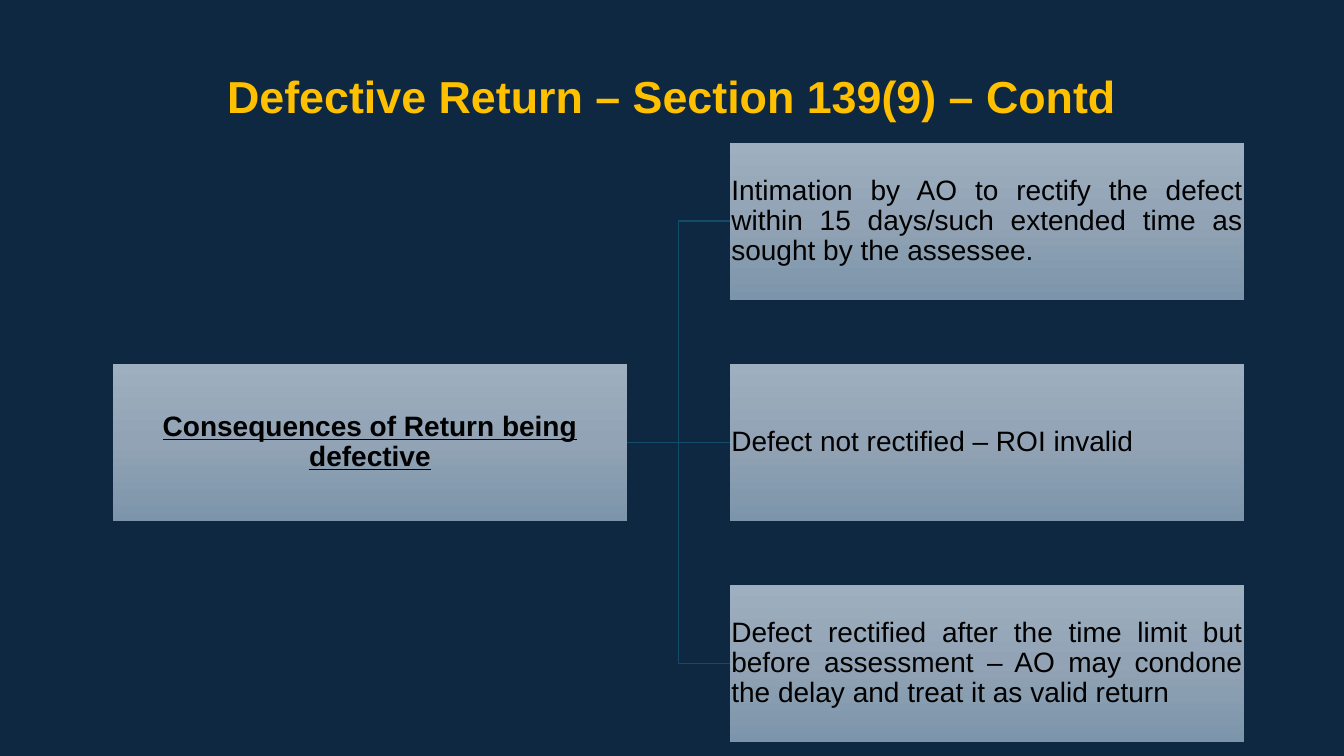
from copy import deepcopy

from pptx import Presentation
from pptx.dml.color import RGBColor
from pptx.enum.shapes import MSO_CONNECTOR, MSO_SHAPE
from pptx.enum.text import MSO_ANCHOR, PP_ALIGN
from pptx.oxml.ns import qn
from pptx.util import Pt

COLORS = {
    "background": "0E2841",
    "title": "FFC000",
    "text": "000000",
    "branch": "114D68",
    "box_top": "9EAFBF",
    "box_middle": "91A3B4",
    "box_bottom": "7C95AB",
}
BOX_GRADIENT = [(0, "box_top"), (0.5, "box_middle"), (1, "box_bottom")]
BOX_WIDTH, BOX_HEIGHT = 367.2, 112
CAUSE_LEFT, OUTCOME_LEFT = 80.7, 521.4
FIRST_TOP, ROW_STEP = 102, 158
RIGHT_SITE, LEFT_SITE = 3, 1

TITLE = "Defective Return – Section 139(9) – Contd"
CAUSE = "Consequences of Return being defective"
OUTCOMES = [
    "Intimation by AO to rectify the defect within 15 days/such extended time "
    "as sought by the assessee.",
    "Defect not rectified – ROI invalid",
    "Defect rectified after the time limit but before assessment – AO may "
    "condone the delay and treat it as valid return",
]


def color(name):
    return RGBColor.from_string(COLORS[name])


def set_attributes(target, values):
    for name, value in values.items():
        setattr(target, name, value)


class SlideBuilder:
    font_name = "Arial"
    line_spacing = 0.9

    def __init__(self, slide):
        self.slide = slide
        fill = slide.background.fill
        fill.solid()
        fill.fore_color.rgb = color("background")

    def add_text(self, shape, text, color_name, alignment, margins, **font_format):
        frame = shape.text_frame
        set_attributes(frame, {"word_wrap": True,
                               "vertical_anchor": MSO_ANCHOR.MIDDLE, **margins})
        paragraph = frame.paragraphs[0]
        set_attributes(paragraph, {"alignment": alignment,
                                   "line_spacing": self.line_spacing})
        run = paragraph.add_run()
        run.text = text
        set_attributes(run.font, {"name": self.font_name, **font_format})
        run.font.color.rgb = color(color_name)

    def title(self, text):
        shape = self.slide.shapes.add_textbox(Pt(66), Pt(18.7), Pt(828), Pt(104.4))
        self.add_text(shape, text, "title", PP_ALIGN.CENTER, {},
                      size=Pt(32), bold=True)

    def box(self, left, top, text, alignment, **font_format):
        shape = self.slide.shapes.add_shape(
            MSO_SHAPE.RECTANGLE, Pt(left), Pt(top), Pt(BOX_WIDTH), Pt(BOX_HEIGHT))
        shape.shadow.inherit = False
        shape.line.fill.background()
        self.fill_gradient(shape)
        margins = {f"margin_{side}": Pt(1)
                   for side in ("left", "top", "right", "bottom")}
        self.add_text(shape, text, "text", alignment, margins,
                      size=Pt(20), **font_format)
        return shape

    def fill_gradient(self, shape):
        shape.fill.gradient()
        shape.fill.gradient_angle = 270
        stop_list = next(shape._element.spPr.iter(qn("a:gsLst")))
        stop_list.append(deepcopy(stop_list[0]))
        for stop, (position, name) in zip(shape.fill.gradient_stops, BOX_GRADIENT):
            stop.position = position
            stop.color.rgb = color(name)

    def branch(self, start, end):
        kind = (MSO_CONNECTOR.STRAIGHT if start.top == end.top
                else MSO_CONNECTOR.ELBOW)
        connector = self.slide.shapes.add_connector(kind, 0, 0, 0, 0)
        connector.begin_connect(start, RIGHT_SITE)
        connector.end_connect(end, LEFT_SITE)
        connector.line.width = Pt(1)
        connector.line.color.rgb = color("branch")
        properties = connector._element.spPr
        properties.append(properties.makeelement(qn("a:effectLst"), {}))


def main():
    presentation = Presentation()
    set_attributes(presentation, {"slide_width": Pt(960), "slide_height": Pt(540)})
    builder = SlideBuilder(
        presentation.slides.add_slide(presentation.slide_layouts[6]))
    builder.title(TITLE)
    cause = builder.box(CAUSE_LEFT, FIRST_TOP + ROW_STEP, CAUSE,
                        PP_ALIGN.CENTER, bold=True, underline=True)
    for row, text in enumerate(OUTCOMES):
        outcome = builder.box(OUTCOME_LEFT, FIRST_TOP + row * ROW_STEP, text,
                              PP_ALIGN.JUSTIFY)
        builder.branch(cause, outcome)
    presentation.save("out.pptx")


if __name__ == "__main__":
    main()
